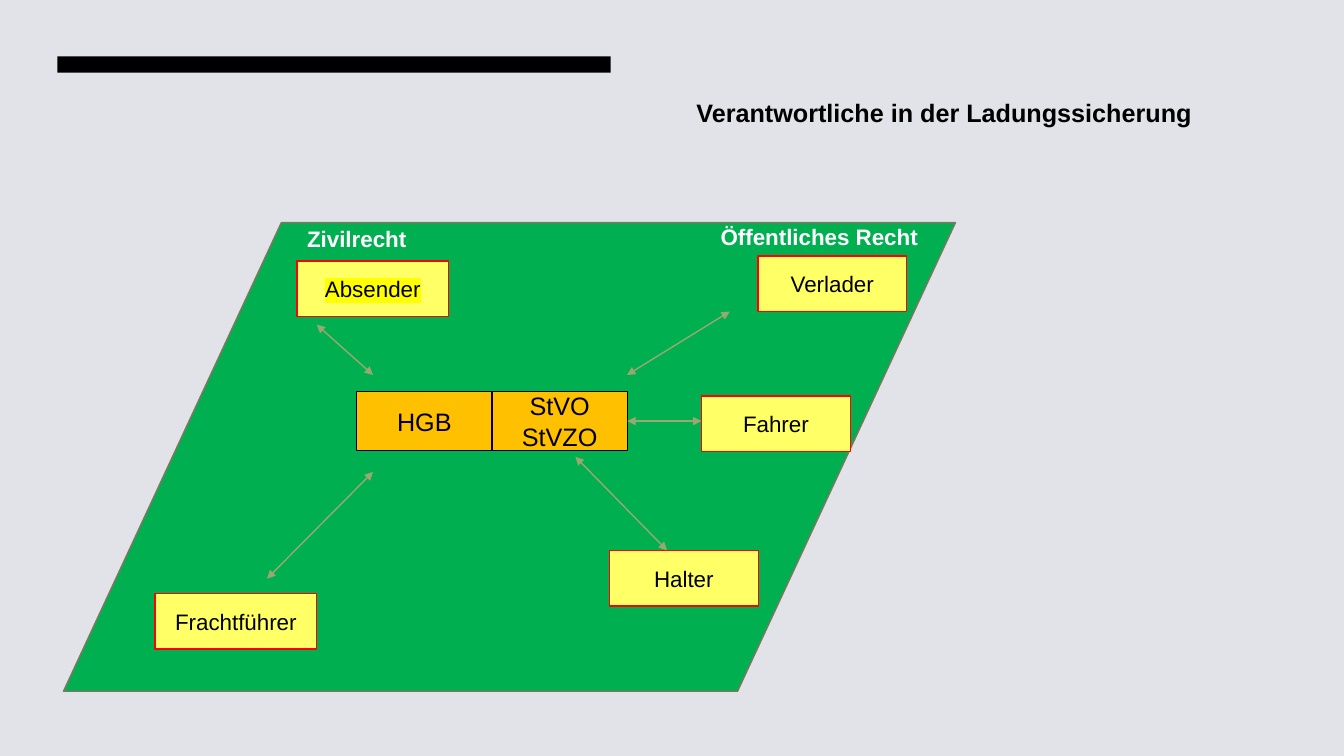
"""Build the slide on who is responsible for securing loads."""
from lxml.etree import SubElement
from pptx import Presentation
from pptx.dml.color import RGBColor
from pptx.enum.shapes import MSO_CONNECTOR, MSO_SHAPE
from pptx.enum.text import MSO_ANCHOR, MSO_AUTO_SIZE, PP_ALIGN
from pptx.oxml.ns import qn
from pptx.util import Cm, Pt

COLORS = {
    "background": "E2E3E8", "black": "000000", "white": "FFFFFF",
    "green": "00B050", "olive": "7E775F", "orange": "FFC000",
    "yellow": "FFFF66", "red": "FF0000", "arrow": "9CA671", "highlight": "FFFF00",
}


def color(name):
    return RGBColor.from_string(COLORS[name])


def add_text(text, left, top, width, height, size=16, font_color="black", bold=False,
             shape=None, fill=None, line=None, align=PP_ALIGN.LEFT, highlight=None):
    box = [Cm(v) for v in (left, top, width, height)]
    if shape is None:
        sp = s.shapes.add_textbox(*box)
        sp.text_frame.auto_size = MSO_AUTO_SIZE.SHAPE_TO_FIT_TEXT
    else:
        sp = s.shapes.add_shape(shape, *box)
        sp.shadow.inherit = False
        sp.fill.solid()
        sp.fill.fore_color.rgb = color(fill)
        if line:
            sp.line.color.rgb = color(line)
            sp.line.width = Pt(1)
        else:
            sp.line.fill.background()
        sp.text_frame.vertical_anchor = MSO_ANCHOR.MIDDLE
    tf = sp.text_frame
    tf.word_wrap = True
    if not text:
        return sp
    tf.text = text
    for p in tf.paragraphs:
        p.alignment = align
        for r in p.runs:
            r.font.size = Pt(size)
            r.font.bold = bold
            r.font.color.rgb = color(font_color)
            if highlight:
                mark = SubElement(r.font._element, qn("a:highlight"))
                SubElement(mark, qn("a:srgbClr"), val=COLORS[highlight])
            r.font.name = "Arial"
    return sp


prs = Presentation()
prs.slide_width, prs.slide_height = Cm(33.87), Cm(19.05)
s = prs.slides.add_slide(prs.slide_layouts[6])
s.background.fill.solid()
s.background.fill.fore_color.rgb = color("background")

add_text("", 1.45, 1.42, 13.94, 0.41, shape=MSO_SHAPE.RECTANGLE, fill="black")
field = add_text("", 1.6, 5.61, 22.48, 11.81, shape=MSO_SHAPE.PARALLELOGRAM,
                 fill="green", line="olive")
field.adjustments[0] = 0.465

laws = [
    add_text(text, 8.99 + i * 3.41, 9.86, 3.41, 1.5, size=18, shape=MSO_SHAPE.RECTANGLE,
             fill="orange", line="black", align=PP_ALIGN.CENTER)
    for i, text in enumerate(("HGB", "StVO\nStVZO"))
]

for text, left, top, width in (("Zivilrecht", 7.49, 5.54, 3.84),
                               ("Öffentliches Recht", 17.91, 5.51, 6.81)):
    add_text(text, left, top, width, 0.94, font_color="white", bold=True)

for text, left, top, width, highlight in (
    ("Absender", 7.49, 6.58, 3.81, "highlight"),
    ("Verlader", 19.1, 6.45, 3.75, None),
    ("Fahrer", 17.68, 9.98, 3.75, None),
    ("Halter", 15.36, 13.87, 3.75, None),
    ("Frachtführer", 3.91, 14.96, 4.07, None),
):
    add_text(text, left, top, width, 1.4, shape=MSO_SHAPE.RECTANGLE, fill="yellow",
             line="red", align=PP_ALIGN.CENTER, highlight=highlight)

for *ends, law in (
    (18.39, 7.85, 15.8, 9.45, None),
    (7.98, 8.18, 9.4, 9.45, None),
    (9.4, 11.89, 6.73, 14.58, None),
    (15.81, 10.61, 17.68, 10.61, laws[1]),
    (14.5, 11.51, 16.81, 13.87, None),
):
    arrow = s.shapes.add_connector(MSO_CONNECTOR.STRAIGHT, *[Cm(v) for v in ends])
    if law:
        arrow.begin_connect(law, 3)
    arrow.line.color.rgb = color("arrow")
    arrow.line.width = Pt(1)
    ln = arrow.line._get_or_add_ln()
    for end in ("a:headEnd", "a:tailEnd"):
        SubElement(ln, qn(end), type="triangle")
    SubElement(arrow._element.spPr, qn("a:effectLst"))

add_text("Verantwortliche in der Ladungssicherung", 17.3, 2.34, 14.81, 1.02,
         size=18, bold=True)

prs.save("out.pptx")
